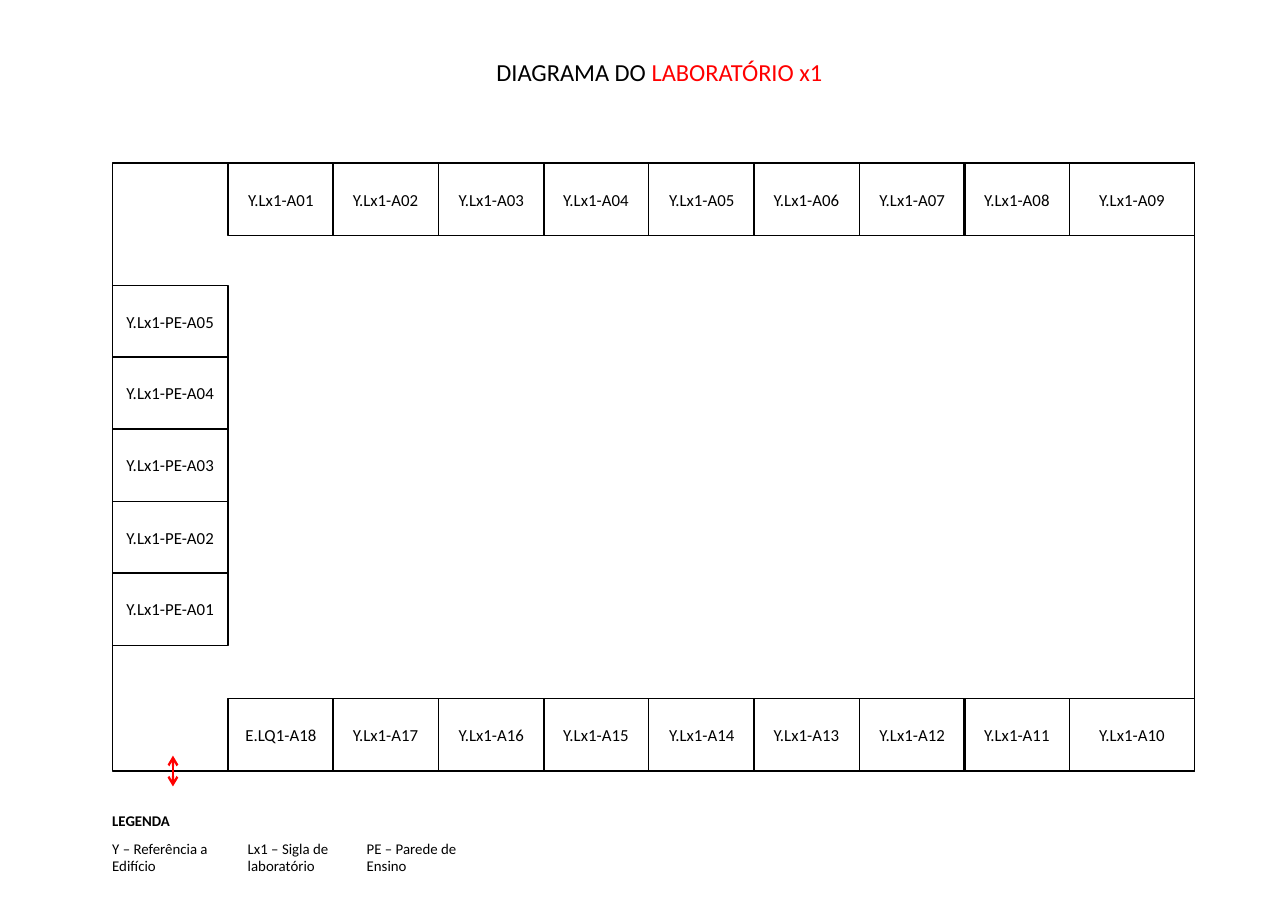
from dataclasses import dataclass

from lxml.etree import SubElement
from pptx import Presentation
from pptx.dml.color import RGBColor
from pptx.enum.shapes import MSO_CONNECTOR as Connector, MSO_SHAPE as Shape
from pptx.enum.text import MSO_ANCHOR as Anchor, MSO_AUTO_SIZE as AutoSize, PP_ALIGN as Align
from pptx.oxml.ns import qn
from pptx.util import Emu, Pt

EMU_PER_PX = 9144
BLACK, RED = "000000", "FF0000"
BENCH_COUNT, WALL_COUNT = 9, 5
BENCH_LEFT, BENCH_WIDTH, LAST_BENCH_WIDTH = 207, 96, 113
TOP_ROW, BOTTOM_ROW, CELL_HEIGHT = 148, 634, 66
WALL_LEFT, WALL_TOP, WALL_WIDTH = 102, 259, 105


@dataclass(frozen=True)
class Box:
    left: int
    top: int
    width: int
    height: int


@dataclass(frozen=True)
class Station:
    label: str
    box: Box


@dataclass(frozen=True)
class Legend:
    text: str
    box: Box
    bold: bool = False
    wrap: bool = True


LEGENDS = [
    Legend("LEGENDA", Box(92, 732, 75, 26), bold=True, wrap=False),
    Legend("Y – Referência a Edifício", Box(92, 757, 135, 43)),
    Legend("Lx1 – Sigla de laboratório", Box(215, 757, 135, 43)),
    Legend("PE – Parede de Ensino", Box(323, 757, 135, 43)),
]


def px(length: int) -> Emu:
    return Emu(length * EMU_PER_PX)


def colour(hex_value: str) -> RGBColor:
    return RGBColor.from_string(hex_value)


def frame(box: Box) -> tuple:
    return px(box.left), px(box.top), px(box.width), px(box.height)


def add_run(paragraph, text: str, size: float, hex_value: str = BLACK, bold: bool = False) -> None:
    run = paragraph.add_run()
    run.text = text
    run.font.name = "Calibri"
    run.font.size = Pt(size)
    run.font.bold = bold
    run.font.color.rgb = colour(hex_value)


def write_title(slide) -> None:
    title = slide.shapes.title
    title.left, title.top, title.width, title.height = frame(Box(235, 47, 727, 37))
    title.text_frame.auto_size = AutoSize.NONE
    title.text_frame.vertical_anchor = Anchor.MIDDLE
    paragraph = title.text_frame.paragraphs[0]
    paragraph.alignment = Align.CENTER
    add_run(paragraph, "DIAGRAMA DO ", 16)
    add_run(paragraph, "LABORATÓRIO x1", 16, RED)


def add_outline(slide, box: Box, line_width: float):
    shape = slide.shapes.add_shape(Shape.RECTANGLE, *frame(box))
    shape.shadow.inherit = False
    shape.fill.background()
    shape.line.color.rgb = colour(BLACK)
    shape.line.width = Pt(line_width)
    return shape


def bench_stations() -> list[Station]:
    """Number the benches clockwise, from the top left to the bottom left."""
    stations = []
    for column in range(BENCH_COUNT):
        left = BENCH_LEFT + column * 191 // 2
        width = LAST_BENCH_WIDTH if column == BENCH_COUNT - 1 else BENCH_WIDTH
        opposite = 2 * BENCH_COUNT - column
        prefix = "Y.Lx1" if column else "E.LQ1"
        stations += [
            Station(f"Y.Lx1-A{column + 1:02}", Box(left, TOP_ROW, width, CELL_HEIGHT)),
            Station(f"{prefix}-A{opposite}", Box(left, BOTTOM_ROW, width, CELL_HEIGHT)),
        ]
    return stations


def wall_stations() -> list[Station]:
    return [
        Station(f"Y.Lx1-PE-A{WALL_COUNT - row:02}",
                Box(WALL_LEFT, WALL_TOP + row * 196 // 3, WALL_WIDTH, CELL_HEIGHT))
        for row in range(WALL_COUNT)
    ]


def add_station(slide, station: Station) -> None:
    text_frame = add_outline(slide, station.box, 0.75).text_frame
    text_frame.word_wrap = True
    text_frame.vertical_anchor = Anchor.MIDDLE
    paragraph = text_frame.paragraphs[0]
    paragraph.alignment = Align.CENTER
    add_run(paragraph, station.label, 11)


def add_door_arrow(slide) -> None:
    arrow = slide.shapes.add_connector(Connector.STRAIGHT, px(157), px(686), px(157), px(714))
    arrow.line.color.rgb = colour(RED)
    arrow.line.width = Pt(1.5)
    line = arrow.line._get_or_add_ln()
    for end in ("a:headEnd", "a:tailEnd"):
        SubElement(line, qn(end), type="arrow")
    SubElement(arrow._element.spPr, qn("a:effectLst"))


def add_legend(slide, legend: Legend) -> None:
    text_frame = slide.shapes.add_textbox(*frame(legend.box)).text_frame
    text_frame.word_wrap = legend.wrap
    add_run(text_frame.paragraphs[0], legend.text, 9.7, bold=legend.bold)


def main() -> None:
    presentation = Presentation()
    presentation.slide_width, presentation.slide_height = px(1169), px(827)
    slide = presentation.slides.add_slide(presentation.slide_layouts[5])
    write_title(slide)
    add_outline(slide, Box(102, 148, 982, 552), 1)
    for station in bench_stations() + wall_stations():
        add_station(slide, station)
    add_door_arrow(slide)
    for legend in LEGENDS:
        add_legend(slide, legend)
    presentation.save("out.pptx")


if __name__ == "__main__":
    main()
